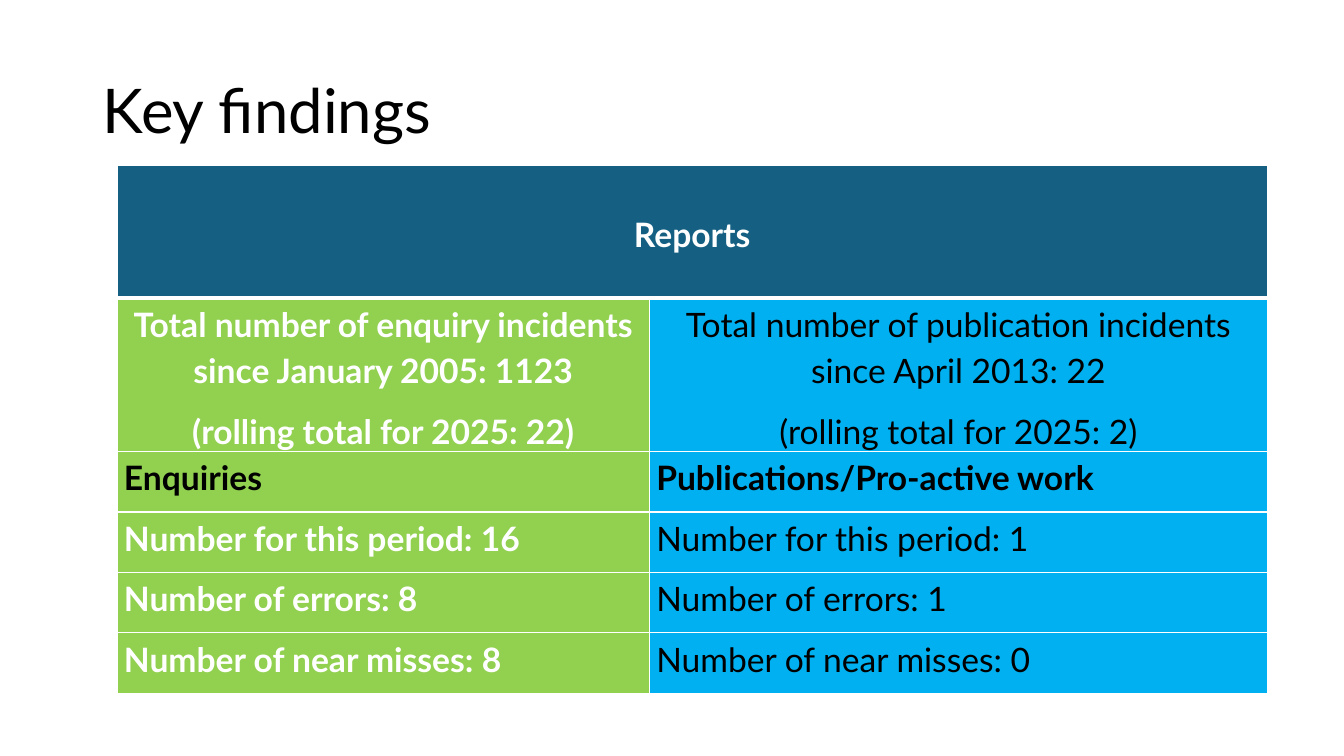
import pptx
import pptx.util
import pptx.dml.color
import pptx.enum.text
import pptx.oxml.ns
import lxml.etree

TITLE = "Key findings"
HEADER = "Reports"
ROWS = [
    (["Total number of enquiry incidents since January 2005: 1123", "(rolling total for 2025: 22)"],
     ["Total number of publication incidents since April 2013: 22", "(rolling total for 2025: 2)"]),
    (["Enquiries"], ["Publications/Pro-active work"]),
    (["Number for this period: 16"], ["Number for this period: 1"]),
    (["Number of errors: 8"], ["Number of errors: 1"]),
    (["Number of near misses: 8"], ["Number of near misses: 0"]),
]
COLUMN_WIDTHS = [5.28, 6.13]
ROW_HEIGHTS = [1.32, 1.23] + [0.6] * 4
TABLE_LEFT, TABLE_TOP = 1.16, 1.64
TITLE_BOX = (0.92, 0.4, 11.5, 1.45)
WHITE, BLACK, NAVY = "FFFFFF", "000000", "156082"
COLUMN_FILLS = ["92D050", "00B0F0"]
COLUMN_FONTS = [(WHITE, True), (BLACK, False)]

Inches, Pt = pptx.util.Inches, pptx.util.Pt
ALIGN = pptx.enum.text.PP_ALIGN
MIDDLE = pptx.enum.text.MSO_ANCHOR.MIDDLE
CELL_MARGINS = {"margin_left": Inches(0.07), "margin_right": Inches(0.07),
                "margin_top": 0, "margin_bottom": 0}
CELL_SPACING = {"line_spacing": 1.15, "space_after": Pt(10)}


def color(code):
    return pptx.dml.color.RGBColor.from_string(code)


def apply(target, values):
    for name, value in values.items():
        setattr(target, name, value)


def write(frame, lines, size, code, bold, layout):
    for index, line in enumerate(lines):
        para = frame.paragraphs[0] if index == 0 else frame.add_paragraph()
        apply(para, layout)
        span = para.add_run()
        span.text = line
        apply(span.font, {"name": "Lato", "size": Pt(size), "bold": bold})
        span.font.color.rgb = color(code)


def add_borders(cell, widths):
    properties = cell._tc.get_or_add_tcPr()
    qn = pptx.oxml.ns.qn
    for side, width in widths.items():
        line = lxml.etree.SubElement(properties, qn("a:ln" + side), w=str(Pt(width)))
        fill = lxml.etree.SubElement(line, qn("a:solidFill"))
        lxml.etree.SubElement(fill, qn("a:srgbClr"), val=WHITE)


def fill_cell(cell, lines, fill, code, bold, align):
    cell.fill.solid()
    cell.fill.fore_color.rgb = color(fill)
    apply(cell, CELL_MARGINS)
    write(cell.text_frame, lines, 24, code, bold, {**CELL_SPACING, "alignment": align})


def main():
    deck = pptx.Presentation()
    apply(deck, {"slide_width": Inches(13.33), "slide_height": Inches(7.5)})
    page = deck.slides.add_slide(deck.slide_layouts[6])

    box = page.shapes.add_textbox(*map(Inches, TITLE_BOX))
    apply(box.text_frame, {"word_wrap": True, "vertical_anchor": MIDDLE})
    write(box.text_frame, [TITLE], 44, BLACK, False, {"line_spacing": 0.9})

    size = (sum(COLUMN_WIDTHS), sum(ROW_HEIGHTS))
    table = page.shapes.add_table(len(ROW_HEIGHTS), len(COLUMN_WIDTHS),
                                  *map(Inches, (TABLE_LEFT, TABLE_TOP, *size))).table
    for column, width in zip(table.columns, COLUMN_WIDTHS):
        column.width = Inches(width)
    for index, (row, height) in enumerate(zip(table.rows, ROW_HEIGHTS)):
        row.height = Inches(height)
        for cell in row.cells:
            add_borders(cell, {"L": 1, "R": 1, "T": 3 if index == 1 else 1,
                               "B": 3 if index == 0 else 1})

    header = table.cell(0, 0)
    header.merge(table.cell(0, 1))
    header.vertical_anchor = MIDDLE
    fill_cell(header, [HEADER], NAVY, WHITE, True, ALIGN.CENTER)

    for row, contents in enumerate(ROWS, 1):
        align = ALIGN.CENTER if row == 1 else ALIGN.LEFT
        for column, lines in enumerate(contents):
            code, bold = (BLACK, True) if row == 2 else COLUMN_FONTS[column]
            fill_cell(table.cell(row, column), lines, COLUMN_FILLS[column], code, bold, align)

    deck.save("out.pptx")


if __name__ == "__main__":
    main()
